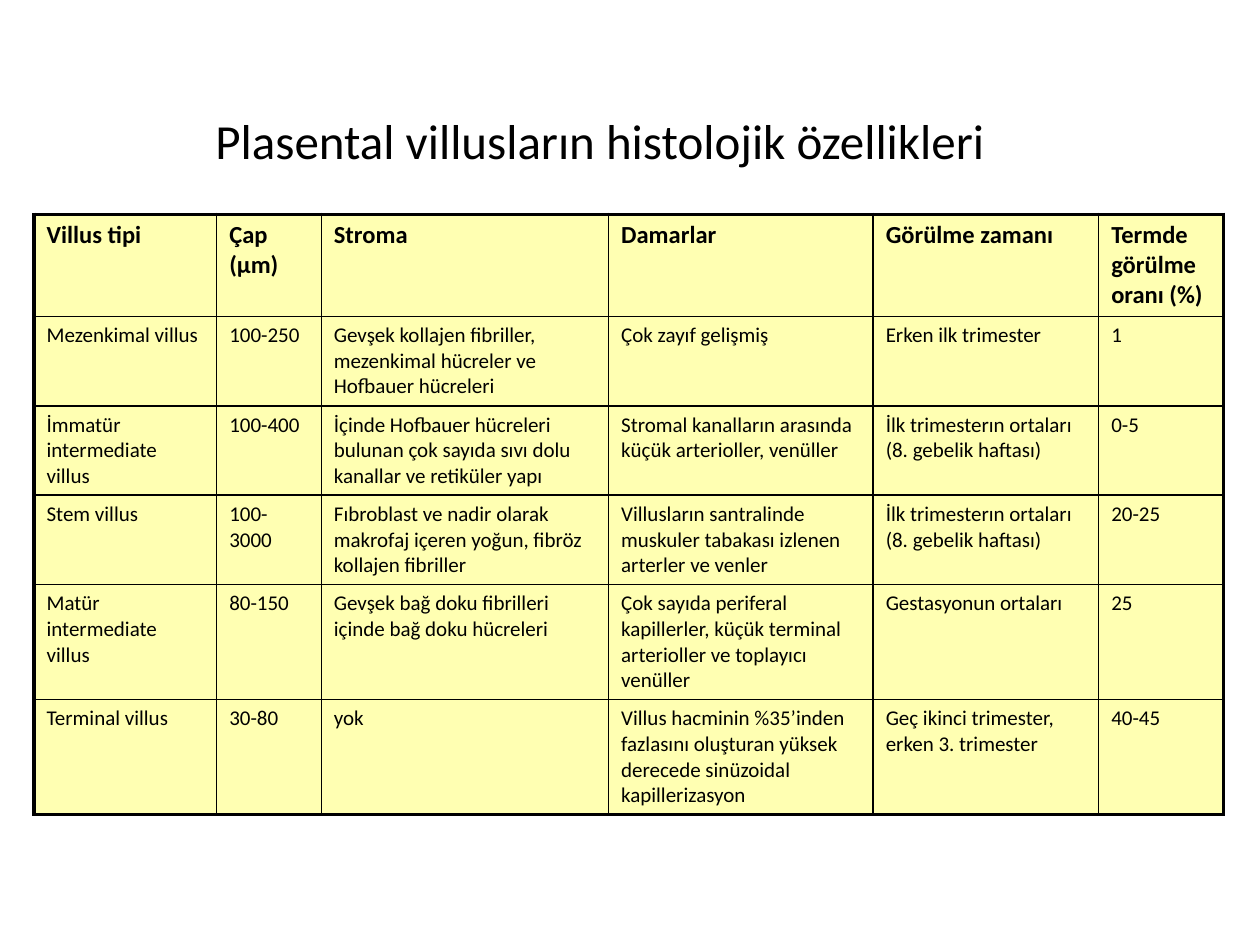
from lxml.etree import SubElement
from pptx import Presentation
from pptx.dml.color import RGBColor as RGB
from pptx.enum.text import MSO_ANCHOR as Anchor, PP_ALIGN as Align
from pptx.oxml import parse_xml
from pptx.oxml.ns import nsdecls, qn
from pptx.util import Inches, Pt

THEME = {
    "font": "Calibri", "ink": "000000", "cell": "FFFF66", "alpha": 50,
    "title": 28, "head": 14, "body": 12, "thin": 1, "thick": 2.25,
}

prs = Presentation()
prs.slide_width, prs.slide_height = Inches(10), Inches(7.5)
# One percent of the slide's width and height
col, row = prs.slide_width / 100, prs.slide_height / 100


def style(par, size, bold=False):
    font = par.font
    font.name, font.size, font.bold = THEME["font"], Pt(size), bold
    font.color.rgb = RGB.from_string(THEME["ink"])


def border(cell, sides):
    for i, (side, thick) in enumerate(sides.items()):
        width = Pt(THEME["thick" if thick else "thin"])
        line = parse_xml(
            f'<a:ln{side} {nsdecls("a")} w="{width}"><a:solidFill>'
            f'<a:srgbClr val="{THEME["ink"]}"/></a:solidFill></a:ln{side}>')
        cell._tc.get_or_add_tcPr().insert(i, line)


slide = prs.slides.add_slide(prs.slide_layouts[5])

# Title
title = slide.shapes.title
title.left, title.top = int(11.4 * col), int(12.13 * row)
title.width, title.height = int(72.4 * col), int(5.33 * row)
frame = title.text_frame
frame.text = "Plasental villusların histolojik özellikleri"
frame.word_wrap = True
frame.vertical_anchor = Anchor.MIDDLE
frame.paragraphs[0].alignment = Align.CENTER
style(frame.paragraphs[0], THEME["title"])

# Table contents
DATA = [
    ["Villus tipi", "Çap (µm)", "Stroma", "Damarlar", "Görülme zamanı",
     "Termde görülme oranı (%)"],
    ["Mezenkimal villus", "100-250",
     "Gevşek kollajen fibriller, mezenkimal hücreler ve Hofbauer hücreleri",
     "Çok zayıf gelişmiş", "Erken ilk trimester", "1"],
    ["İmmatür intermediate villus", "100-400",
     "İçinde Hofbauer hücreleri bulunan çok sayıda sıvı dolu kanallar ve "
     "retiküler yapı",
     "Stromal kanalların arasında küçük arterioller, venüller",
     "İlk trimesterın ortaları (8. gebelik haftası)", "0-5"],
    ["Stem villus", "100-3000",
     "Fıbroblast ve nadir olarak makrofaj içeren yoğun, fibröz kollajen "
     "fibriller",
     "Villusların santralinde muskuler tabakası izlenen arterler ve venler",
     "İlk trimesterın ortaları (8. gebelik haftası)", "20-25"],
    ["Matür intermediate villus", "80-150",
     "Gevşek bağ doku fibrilleri içinde bağ doku hücreleri",
     "Çok sayıda periferal kapillerler, küçük terminal arterioller ve "
     "toplayıcı venüller",
     "Gestasyonun ortaları", "25"],
    ["Terminal villus", "30-80", "yok",
     "Villus hacminin %35’inden fazlasını oluşturan yüksek derecede "
     "sinüzoidal kapillerizasyon",
     "Geç ikinci trimester, erken 3. trimester", "40-45"],
]
WIDE = [14.5, 8.3, 22.8, 21, 17.9, 9.9]
HIGH = [6.27, 8.4, 8.4, 8.4, 9.73, 11.6]

# Table grid
table = slide.shapes.add_table(
    len(HIGH), len(WIDE), int(2.7 * col), int(22.67 * row),
    int(sum(WIDE) * col), int(sum(HIGH) * row)).table
table.horz_banding = False
for part, wide in zip(table.columns, WIDE):
    part.width = int(wide * col)
for part, high in zip(table.rows, HIGH):
    part.height = int(high * row)

# Cells: half-clear yellow, thin inner lines and a thick outer frame
for r, line in enumerate(DATA):
    for c, text in enumerate(line):
        cell = table.cell(r, c)
        cell.text = text
        style(cell.text_frame.paragraphs[0],
              THEME["body" if r else "head"], bold=r == 0)
        cell.fill.solid()
        cell.fill.fore_color.rgb = RGB.from_string(THEME["cell"])
        tint = cell._tc.tcPr.find(".//" + qn("a:srgbClr"))
        SubElement(tint, qn("a:alpha"), val=str(THEME["alpha"] * 1000))
        border(cell, {"L": c == 0, "R": c == len(WIDE) - 1,
                      "T": r == 0, "B": r == len(HIGH) - 1})

prs.save("out.pptx")
